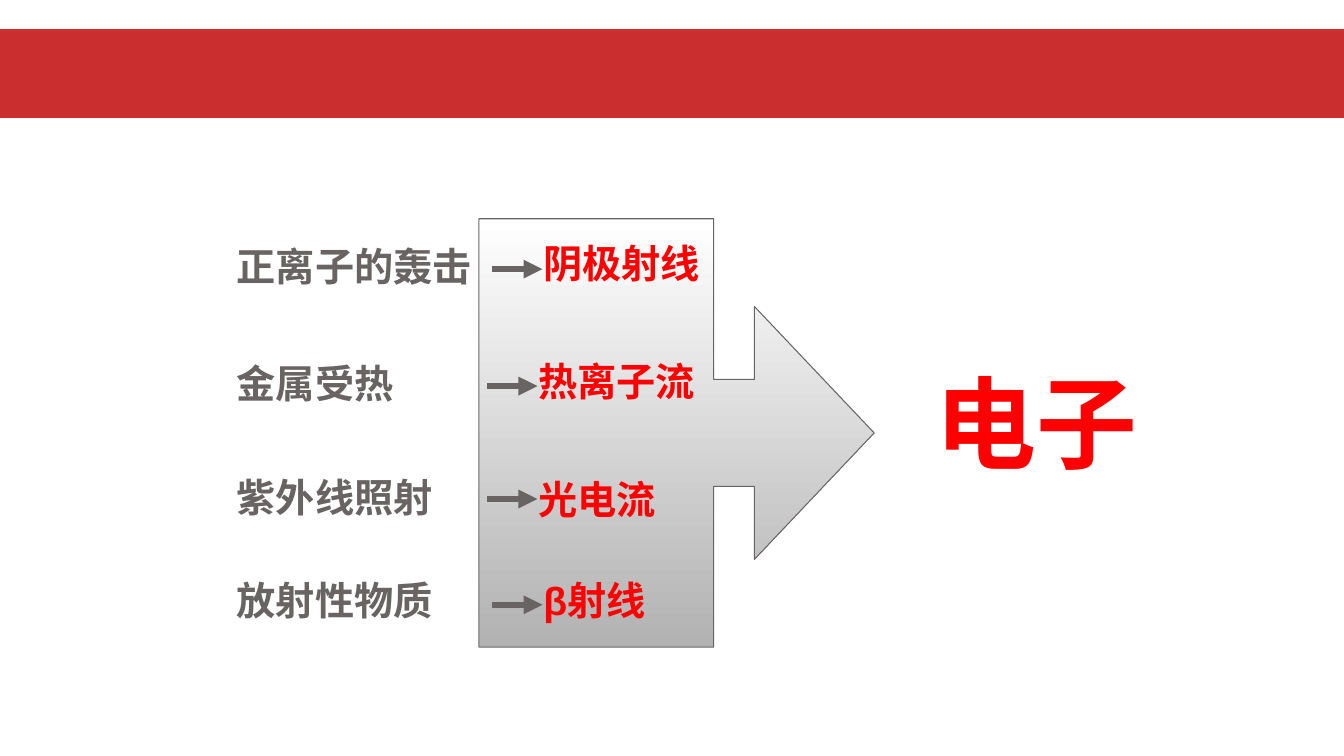
from lxml import etree
from pptx import Presentation
from pptx.dml.color import RGBColor
from pptx.enum.shapes import MSO_CONNECTOR as CONNECTOR, MSO_SHAPE as SHAPE
from pptx.enum.text import MSO_AUTO_SIZE as AUTO_SIZE, PP_ALIGN as ALIGN
from pptx.oxml.ns import qn
from pptx.util import Inches, Pt

GREY, RED, BAND_RED = "696464", "FF0000", "C00000"
CAUSE_LEFT = 2.25
ARROW_LENGTH = 0.5
RAY_OFFSET = 0.41  # from the arrow's start to the ray label

# cause, its top, ray, its top, arrow left, arrow height on the slide
ROWS = [
    ("正离子的轰击", 2.35, "阴极射线", 2.33, 4.88, 2.67),
    ("金属受热", 3.52, "热离子流", 3.5, 4.83, 3.83),
    ("紫外线照射", 4.65, "光电流", 4.67, 4.83, 4.95),
    ("放射性物质", 5.67, "β射线", 5.67, 4.88, 6),
]


def rgb(value):
    return RGBColor.from_string(value)


def add_label(slide, text, left, top, color, size=28,
              width=2.75, height=0.57, align=ALIGN.LEFT):
    box = slide.shapes.add_textbox(*map(Inches, (left, top, width, height)))
    frame = box.text_frame
    frame.word_wrap = True
    frame.auto_size = AUTO_SIZE.SHAPE_TO_FIT_TEXT
    paragraph = frame.paragraphs[0]
    paragraph.text = text
    paragraph.alignment = align
    font = paragraph.font
    font.name, font.size, font.bold = "Arial", Pt(size), True
    font.color.rgb = rgb(color)


def add_arrow(slide, left, y):
    arrow = slide.shapes.add_connector(
        CONNECTOR.STRAIGHT,
        *map(Inches, (left, y, left + ARROW_LENGTH, y)))
    arrow.line.color.rgb = rgb(GREY)
    arrow.line.width = Pt(4.5)
    etree.SubElement(arrow.line._get_or_add_ln(), qn("a:tailEnd"),
                     type="triangle")
    etree.SubElement(arrow._element.spPr, qn("a:effectLst"))


def add_band(slide, left, top, width, height):
    band = slide.shapes.add_shape(
        SHAPE.RECTANGLE, *map(Inches, (left, top, width, height)))
    band.shadow.inherit = False
    band.fill.solid()
    band.fill.fore_color.rgb = rgb(BAND_RED)
    color = band._element.spPr.find(".//" + qn("a:srgbClr"))
    etree.SubElement(color, qn("a:alpha"), val="82000")
    band.line.fill.background()


def add_callout(slide, left, top, width, height):
    callout = slide.shapes.add_shape(
        SHAPE.RIGHT_ARROW_CALLOUT, *map(Inches, (left, top, width, height)))
    callout.shadow.inherit = False
    for index, value in enumerate((0.271, 0.32, 0.303, 0.594)):
        callout.adjustments[index] = value
    callout.fill.gradient()
    callout.fill.gradient_angle = 270
    for stop, color, position in zip(
            callout.fill.gradient_stops, ("FFFFFF", "B2B2B2"), (0, 1)):
        stop.color.rgb = rgb(color)
        stop.position = position
    callout.line.color.rgb = rgb(GREY)
    callout.line.width = Pt(0.75)


def add_row(slide, cause, cause_top, ray, ray_top, arrow_left, arrow_y):
    add_label(slide, cause, CAUSE_LEFT, cause_top, GREY)
    add_label(slide, ray, arrow_left + RAY_OFFSET, ray_top, RED)
    add_arrow(slide, arrow_left, arrow_y)


def main():
    deck = Presentation()
    deck.slide_width, deck.slide_height = Inches(13.33), Inches(7.5)
    slide = deck.slides.add_slide(deck.slide_layouts[6])
    add_band(slide, 0, 0.29, 13.33, 0.88)
    add_callout(slide, 4.75, 2.17, 3.92, 4.25)
    for row in ROWS:
        add_row(slide, *row)
    add_label(slide, "电子", 8.88, 3.53, RED, size=72,
              width=2.79, height=1.31, align=ALIGN.CENTER)
    deck.save("out.pptx")


if __name__ == "__main__":
    main()
